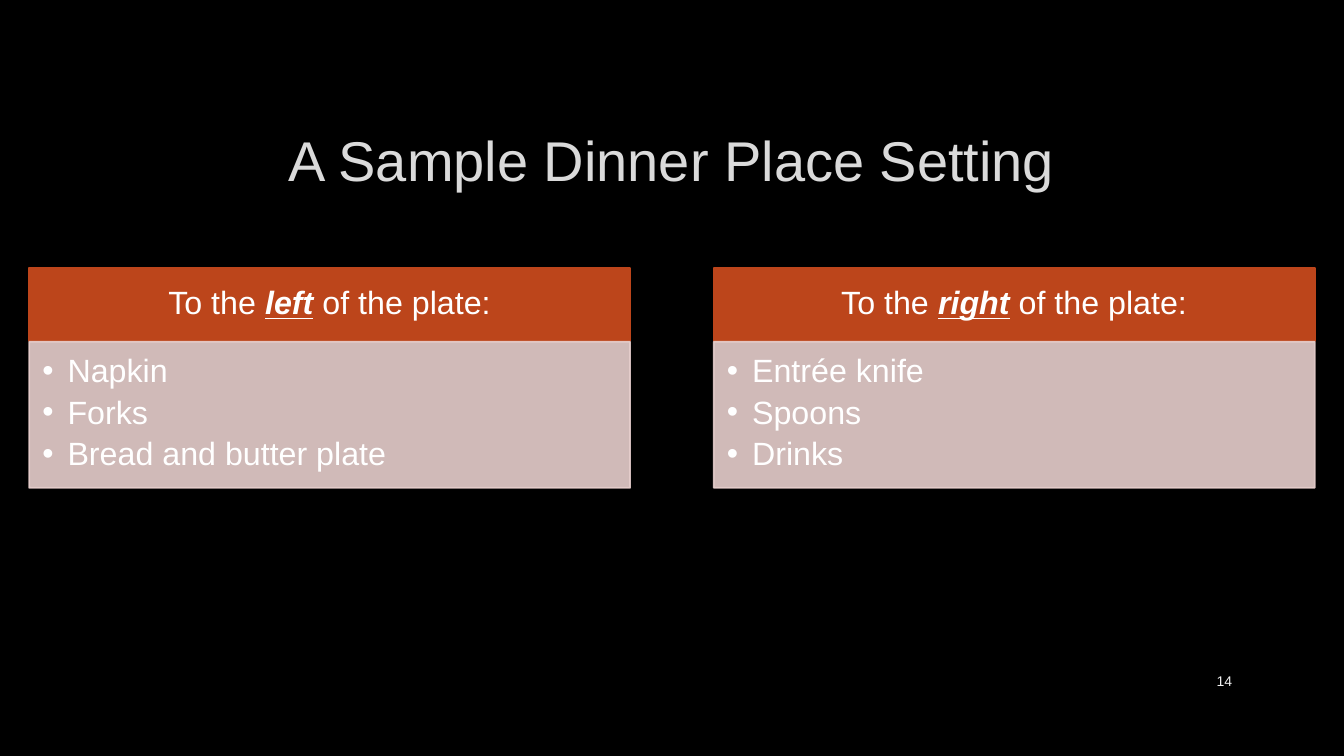
"""Build the dinner place setting slide with two headed lists."""
from lxml import etree
from pptx import Presentation
from pptx.dml.color import RGBColor
from pptx.enum.shapes import MSO_SHAPE
from pptx.enum.text import MSO_ANCHOR, MSO_AUTO_SIZE, PP_ALIGN
from pptx.oxml.ns import qn
from pptx.util import Inches, Pt

RECTANGLE = MSO_SHAPE.RECTANGLE
TOP, MIDDLE, BOTTOM = MSO_ANCHOR.TOP, MSO_ANCHOR.MIDDLE, MSO_ANCHOR.BOTTOM
LEFT, CENTER, RIGHT = PP_ALIGN.LEFT, PP_ALIGN.CENTER, PP_ALIGN.RIGHT
FIXED_SIZE = MSO_AUTO_SIZE.NONE

TITLE = "A Sample Dinner Place Setting"
PAGE_NUMBER = "14"
SIDES = [
    ("left", ["Napkin", "Forks", "Bread and butter plate"]),
    ("right", ["Entrée knife", "Spoons", "Drinks"]),
]

FONT = "Arial"
BLACK, WHITE, TITLE_GRAY, NUMBER_GRAY = "000000", "FFFFFF", "DADADA", "F2F2F2"
RUST, BLUSH = "BC451B", "E7CFCD"

FIRST_LEFT, COLUMN_STEP, COLUMN_WIDTH = 0.29, 6.79, 5.96
HEADER_TOP, HEADER_HEIGHT = 2.66, 0.72
LIST_TOP, LIST_HEIGHT = 3.39, 1.45


def paint(color_format, color):
    color_format.rgb = RGBColor.from_string(color)


def style(para, size, color, align):
    para.font.name = FONT
    para.font.size = Pt(size)
    paint(para.font.color, color)
    para.alignment = align


def set_frame(frame, anchor, margins=(0.1, 0.05, 0.1, 0.05)):
    frame.word_wrap = True
    frame.auto_size = FIXED_SIZE
    frame.vertical_anchor = anchor
    (frame.margin_left, frame.margin_top,
     frame.margin_right, frame.margin_bottom) = map(Inches, margins)


def add_panel(page, left, top, height, color, opacity=100):
    panel = page.shapes.add_shape(
        RECTANGLE, Inches(left), Inches(top), Inches(COLUMN_WIDTH), Inches(height))
    panel.shadow.inherit = False
    panel.fill.solid()
    paint(panel.fill.fore_color, color)
    paint(panel.line.color, color)
    panel.line.width = Pt(1.25)
    if opacity < 100:
        for swatch in panel.element.spPr.iter(qn("a:srgbClr")):
            etree.SubElement(swatch, qn("a:alpha"), val=str(opacity * 1000))
    return panel.text_frame


def add_bullet(para):
    properties = para._p.get_or_add_pPr()
    properties.set("marL", str(Inches(0.25)))
    properties.set("indent", str(Inches(-0.25)))
    etree.SubElement(properties, qn("a:buFont"), typeface=FONT)
    etree.SubElement(properties, qn("a:buChar"), char="•")


def add_header(page, left, side):
    frame = add_panel(page, left, HEADER_TOP, HEADER_HEIGHT, RUST)
    set_frame(frame, MIDDLE, (0.18, 0.1, 0.18, 0.1))
    para = frame.paragraphs[0]
    for text in ("To the ", side, " of the plate:"):
        span = para.add_run()
        span.text = text
        if text == side:
            span.font.bold = span.font.italic = span.font.underline = True
    para.line_spacing = 0.9
    style(para, 23, WHITE, CENTER)


def add_list(page, left, items):
    frame = add_panel(page, left, LIST_TOP, LIST_HEIGHT, BLUSH, 90)
    set_frame(frame, TOP, (0.13, 0.13, 0.18, 0.2))
    frame.text = "\n".join(items)
    for para in frame.paragraphs:
        para.line_spacing = 0.9
        para.space_after = Pt(4.8)
        style(para, 23, WHITE, LEFT)
        add_bullet(para)


def main():
    deck = Presentation()
    deck.slide_width, deck.slide_height = Inches(13.33), Inches(7.5)
    page = deck.slides.add_slide(deck.slide_layouts[5])
    page.background.fill.solid()
    paint(page.background.fill.fore_color, BLACK)

    title = page.shapes.title
    title.left, title.top = Inches(0.78), Inches(0.94)
    title.width, title.height = Inches(11.76), Inches(1.02)
    title.text_frame.text = TITLE
    set_frame(title.text_frame, BOTTOM)
    para = title.text_frame.paragraphs[0]
    para.space_before, para.space_after = Pt(9.6), Pt(6)
    style(para, 40, TITLE_GRAY, CENTER)

    for index, (side, items) in enumerate(SIDES):
        left = FIRST_LEFT + index * COLUMN_STEP
        add_header(page, left, side)
        add_list(page, left, items)

    number = page.shapes.add_textbox(
        Inches(11.5), Inches(6.56), Inches(0.82), Inches(0.4))
    number.text_frame.text = PAGE_NUMBER
    set_frame(number.text_frame, MIDDLE)
    style(number.text_frame.paragraphs[0], 10, NUMBER_GRAY, RIGHT)
    deck.save("out.pptx")


if __name__ == "__main__":
    main()
